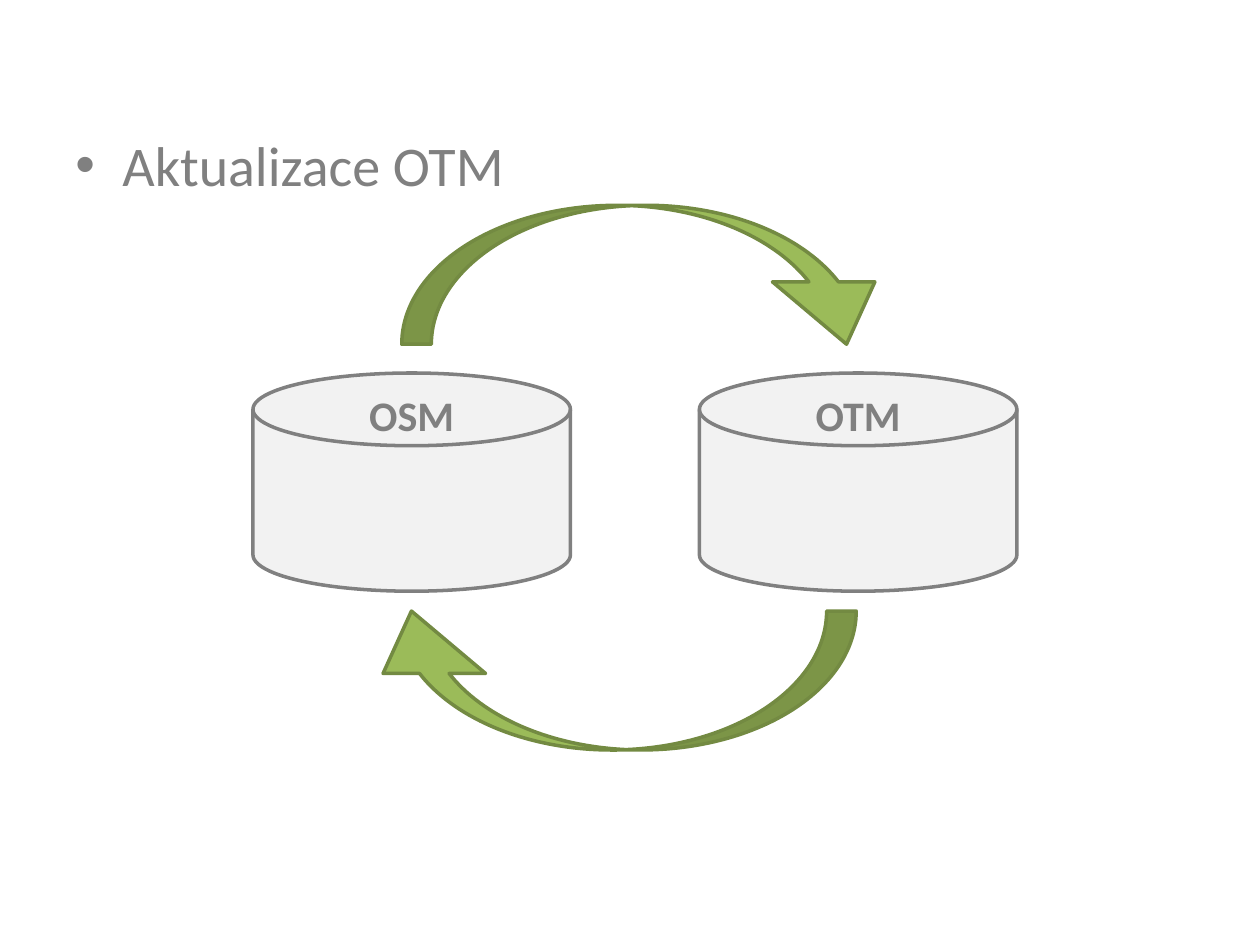
from lxml import etree
from pptx import Presentation
from pptx.dml.color import RGBColor
from pptx.enum.shapes import MSO_SHAPE as SHAPE
from pptx.enum.text import MSO_ANCHOR, MSO_AUTO_SIZE, PP_ALIGN
from pptx.oxml.ns import qn
from pptx.util import Cm, Pt

GRAY = RGBColor(0x80, 0x80, 0x80)
LIGHT = RGBColor(0xF2, 0xF2, 0xF2)
GREEN = RGBColor(0x9B, 0xBB, 0x59)
DARK_GREEN = RGBColor(0x73, 0x8A, 0x42)

BULLET_FONT = {"name": "Calibri", "size": Pt(32)}
LABEL_FONT = {"name": "Calibri", "size": Pt(24), "bold": True}
ARROW_ADJ = (0.213, 0.738, 0.449)


def add_paragraph_text(p, text, font):
    r = p.add_run()
    r.text = text
    for name, value in font.items():
        setattr(r.font, name, value)
    r.font.color.rgb = GRAY


def add_outlined(s, kind, box, fill, line):
    sp = s.shapes.add_shape(kind, *(Cm(v) for v in box))
    sp.shadow.inherit = False
    sp.fill.solid()
    sp.fill.fore_color.rgb = fill
    sp.line.color.rgb = line
    sp.line.width = Pt(2)
    return sp


def add_bullet(s, left, top, width, height, text):
    tf = s.shapes.add_textbox(Cm(left), Cm(top), Cm(width), Cm(height)).text_frame
    tf.word_wrap = True
    p = tf.paragraphs[0]
    pPr = p._p.get_or_add_pPr()
    pPr.set("marL", str(Cm(0.95)))
    pPr.set("indent", str(-Cm(0.95)))
    etree.SubElement(pPr, qn("a:buFont")).set("typeface", "Arial")
    etree.SubElement(pPr, qn("a:buChar")).set("char", "•")
    add_paragraph_text(p, text, BULLET_FONT)


def add_database(s, left, top, width, height, name):
    add_outlined(s, SHAPE.FLOWCHART_MAGNETIC_DISK,
                 (left, top, width, height), LIGHT, GRAY)
    # Name centred on the lid
    label_w = 2.24
    box = s.shapes.add_textbox(Cm(left + (width - label_w) / 2), Cm(top + 0.2),
                               Cm(label_w), Cm(1.27))
    tf = box.text_frame
    tf.word_wrap = False
    tf.auto_size = MSO_AUTO_SIZE.SHAPE_TO_FIT_TEXT
    tf.vertical_anchor = MSO_ANCHOR.TOP
    p = tf.paragraphs[0]
    p.alignment = PP_ALIGN.CENTER
    add_paragraph_text(p, name, LABEL_FONT)


def add_curved_arrow(s, left, top, width, height, rotation):
    # A quarter turn swaps width and height around the same centre
    shift = (width - height) / 2
    sp = add_outlined(s, SHAPE.CURVED_RIGHT_ARROW,
                      (left + shift, top - shift, height, width), GREEN, DARK_GREEN)
    for i, value in enumerate(ARROW_ADJ):
        sp.adjustments[i] = value
    sp.rotation = rotation
    sp._element.spPr.find(qn("a:xfrm")).set("flipV", "1")


def add_update_cycle(s, left, top, width, height):
    disk_w, disk_h = 6.4, 4.4
    arrow_w, arrow_h = 10, 2.8
    # Databases at both ends
    disk_top = top + 3.38
    add_database(s, left + width - disk_w, disk_top, disk_w, disk_h, "OTM")
    add_database(s, left, disk_top, disk_w, disk_h, "OSM")
    # Arrow over the top, and arrow back underneath
    add_curved_arrow(s, left + 3, top, arrow_w, arrow_h, 90)
    add_curved_arrow(s, left + 2.16, top + height - arrow_h, arrow_w, arrow_h, 270)


def main():
    prs = Presentation()
    prs.slide_width, prs.slide_height = Cm(25.4), Cm(19.05)
    s = prs.slides.add_slide(prs.slide_layouts[6])
    add_bullet(s, 1.27, 2.51, 22.86, 16.26, "Aktualizace OTM")
    add_update_cycle(s, 5.1, 4.14, 15.4, 10.98)
    prs.save("out.pptx")


if __name__ == "__main__":
    main()
